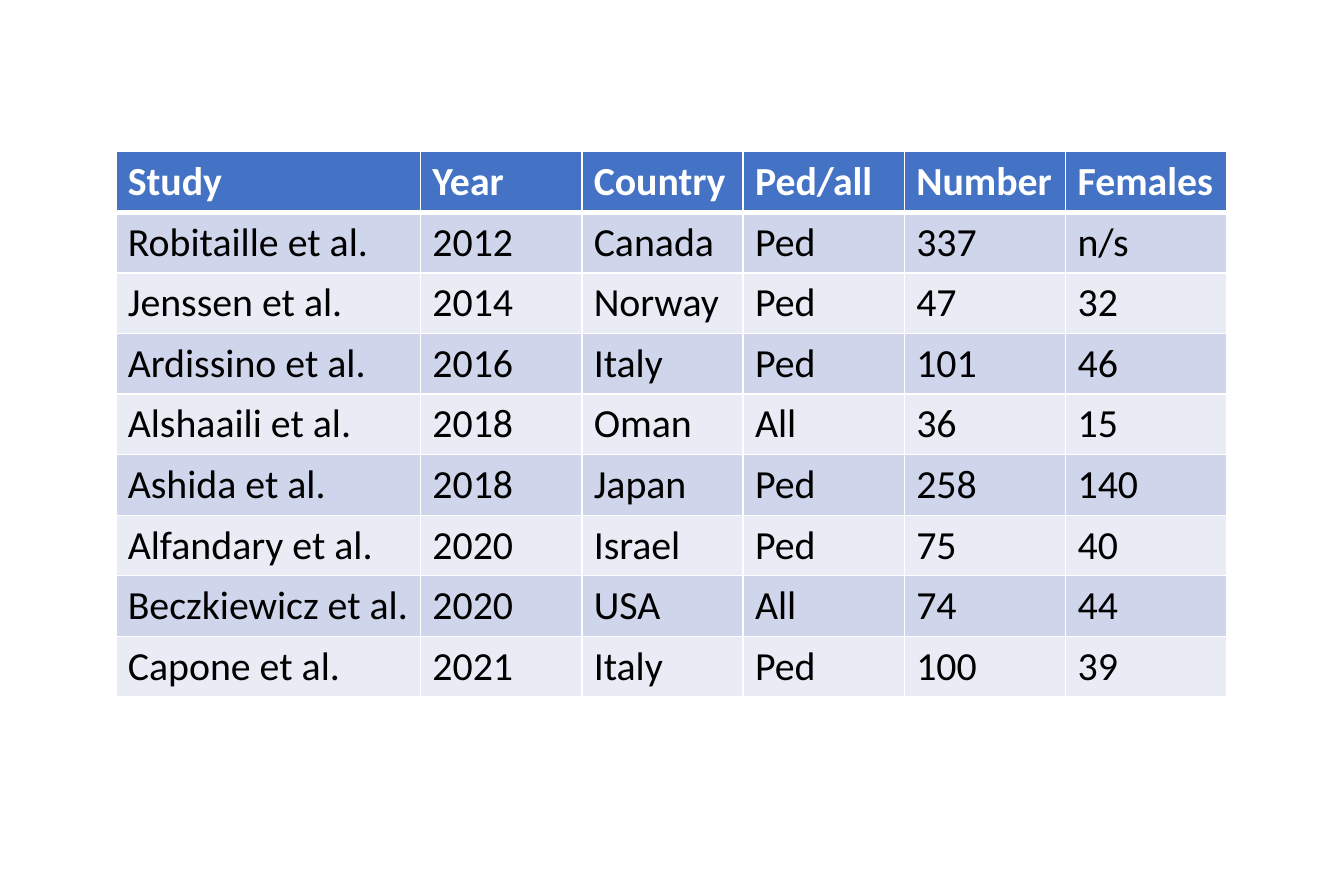
from dataclasses import astuple, dataclass, fields

from pptx import Presentation
from pptx.dml.color import RGBColor
from pptx.oxml import parse_xml
from pptx.oxml.ns import nsdecls
from pptx.table import _Cell
from pptx.util import Pt

WHITE, BLACK, BLUE = "FFFFFF", "000000", "4472C4"
BANDS = ("CFD5EA", "E9EBF5")
LEFT, TOP = 69.84, 91.44
WIDE, SLIM, HIGH = 183.6, 97.2, 36


@dataclass
class Study:
    study: str
    year: str
    country: str
    group: str
    number: str
    females: str


HEAD = Study("Study", "Year", "Country", "Ped/all", "Number", "Females")
STUDIES = [
    Study("Robitaille et al.", "2012", "Canada", "Ped", "337", "n/s"),
    Study("Jenssen et al.", "2014", "Norway", "Ped", "47", "32"),
    Study("Ardissino et al.", "2016", "Italy", "Ped", "101", "46"),
    Study("Alshaaili et al.", "2018", "Oman", "All", "36", "15"),
    Study("Ashida et al.", "2018", "Japan", "Ped", "258", "140"),
    Study("Alfandary et al.", "2020", "Israel", "Ped", "75", "40"),
    Study("Beczkiewicz et al.", "2020", "USA", "All", "74", "44"),
    Study("Capone et al.", "2021", "Italy", "Ped", "100", "39"),
]


@dataclass
class Look:
    fill: str
    ink: str
    bold: bool = False
    above: float = 1
    below: float = 1


def rgb(code: str) -> RGBColor:
    return RGBColor.from_string(code)


def add_rules(cell: _Cell, look: Look) -> None:
    """Draw white borders, placed before the fill as the schema asks."""
    sides = {"lnL": 1, "lnR": 1, "lnT": look.above, "lnB": look.below}
    props = cell._tc.get_or_add_tcPr()
    for spot, (tag, width) in enumerate(sides.items()):
        props.insert(spot, parse_xml(
            f'<a:{tag} {nsdecls("a")} w="{Pt(width)}"><a:solidFill>'
            f'<a:srgbClr val="{WHITE}"/></a:solidFill></a:{tag}>'))


def fill_cell(cell: _Cell, words: str, look: Look) -> None:
    cell.text = words
    font = cell.text_frame.paragraphs[0].font
    font.name, font.size, font.bold = "Calibri", Pt(24), look.bold
    font.color.rgb = rgb(look.ink)
    cell.fill.solid()
    cell.fill.fore_color.rgb = rgb(look.fill)
    add_rules(cell, look)


def pick_look(row: int) -> Look:
    if row == 0:
        return Look(BLUE, WHITE, bold=True, below=3)
    return Look(BANDS[(row - 1) % 2], BLACK, above=3 if row == 1 else 1)


def main() -> None:
    deck = Presentation()
    deck.slide_width, deck.slide_height = Pt(810), Pt(540)
    slide = deck.slides.add_slide(deck.slide_layouts[6])

    rows = [HEAD, *STUDIES]
    widths = [WIDE] + [SLIM] * (len(fields(Study)) - 1)
    table = slide.shapes.add_table(
        len(rows), len(widths), Pt(LEFT), Pt(TOP),
        Pt(sum(widths)), Pt(HIGH * len(rows))).table
    for column, width in zip(table.columns, widths):
        column.width = Pt(width)
    for row, study in enumerate(rows):
        for cell, words in zip(table.rows[row].cells, astuple(study)):
            fill_cell(cell, words, pick_look(row))

    deck.save("out.pptx")


if __name__ == "__main__":
    main()
